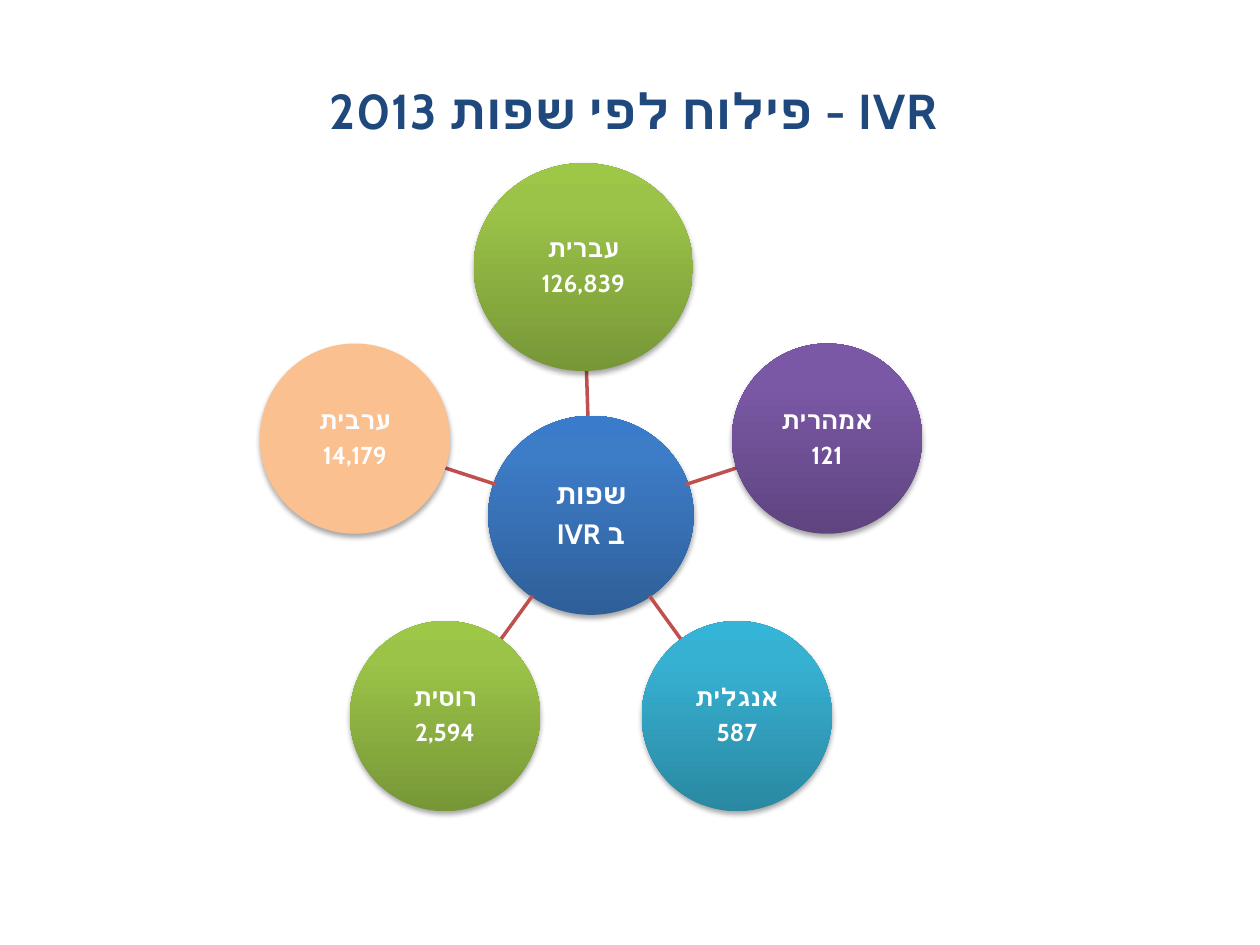
"""Radial diagram of IVR calls by language in 2013."""
from copy import deepcopy
from math import cos, hypot, radians, sin

from lxml import etree
from pptx import Presentation
from pptx import util as u
from pptx.dml.color import RGBColor
from pptx.enum import shapes, text
from pptx.oxml.ns import qn

TITLE = "IVR - פילוח לפי שפות 2013"
HUB = ("שפות", "ב IVR")
LANGUAGES = [
    {"lines": ("עברית", "126,839"), "fill": "green", "size": (17.4, 16.5), "shift": -0.6},
    {"lines": ("אמהרית", "121"), "fill": "purple"},
    {"lines": ("אנגלית", "587"), "fill": "teal"},
    {"lines": ("רוסית", "2,594"), "fill": "green"},
    {"lines": ("ערבית", "14,179"), "fill": "peach"},
]
THEME = {
    "font": "Cabin", "title": "1F497D", "text": "FFFFFF", "line": "C0504D",
    "title_size": 28, "hub_size": 16, "language_size": 14, "line_width": 2,
    "blue": ("2F5F99", "3D7CC7", "3A7CCB"),
    "green": ("779737", "9BC348", "9DC746"),
    "purple": ("5F4480", "7B58A6", "7C57A8"),
    "teal": ("2A88A2", "37B1D2", "34B4D6"),
    "peach": ("FAC090",),
}
STOPS = (0, 0.8, 1)
COLUMNS, ROWS = 100, 75
CENTER, HUB_SIZE = (46.9, 40.9), (16.3, 15.8)
LANGUAGE_SIZE, ORBIT = (15.1, 15.1), 19.7

deck = Presentation()
deck.slide_width, deck.slide_height = u.Inches(10), u.Inches(7.5)
page = deck.slides.add_slide(deck.slide_layouts[6])


def grid(*values):
    return [int(value * deck.slide_width / COLUMNS) for value in values]


def write(frame, lines, size, color, spacing, after=0, tracking=None):
    frame.word_wrap = True
    frame.vertical_anchor = text.MSO_ANCHOR.MIDDLE
    for index, line in enumerate(lines):
        para = frame.paragraphs[0] if index == 0 else frame.add_paragraph()
        para.alignment = text.PP_ALIGN.CENTER
        para.line_spacing, para.space_after = spacing, u.Pt(after)
        para._p.get_or_add_pPr().set("rtl", "1")
        span = para.add_run()
        span.text = line
        span.font.name, span.font.size, span.font.bold = THEME["font"], u.Pt(size), True
        span.font.color.rgb = RGBColor.from_string(color)
        properties = span.font._element
        etree.SubElement(properties, qn("a:cs"), typeface=THEME["font"])
        if tracking:
            properties.set("spc", str(tracking))


def paint(circle, colors):
    if len(colors) == 1:
        circle.fill.solid()
        circle.fill.fore_color.rgb = RGBColor.from_string(colors[0])
        return
    circle.fill.gradient()
    circle.fill.gradient_angle = 90
    stops = circle._element.spPr.find(".//" + qn("a:gsLst"))
    stops.append(deepcopy(stops[-1]))
    for stop, position, color in zip(circle.fill.gradient_stops, STOPS, colors):
        stop.position = position
        stop.color.rgb = RGBColor.from_string(color)


def cast_shadow(circle):
    circle.shadow.inherit = False
    effects = circle._element.spPr.find(qn("a:effectLst"))
    shadow = etree.SubElement(effects, qn("a:outerShdw"), blurRad=str(u.Pt(3.1)),
                              dist=str(u.Pt(1.8)), dir="5400000", rotWithShape="0")
    color = etree.SubElement(shadow, qn("a:srgbClr"), val="000000")
    etree.SubElement(color, qn("a:alpha"), val="35000")


def add_circle(center, size, lines, fill, points):
    (x, y), (width, height) = center, size
    circle = page.shapes.add_shape(
        shapes.MSO_SHAPE.OVAL, *grid(x - width / 2, y - height / 2, width, height))
    paint(circle, THEME[fill])
    circle.line.fill.background()
    cast_shadow(circle)
    frame = circle.text_frame
    frame.margin_left = frame.margin_right = frame.margin_top = frame.margin_bottom = u.Inches(0.01)
    write(frame, lines, points, THEME["text"], 0.9, points * 0.35)


def add_spoke(center, size):
    dx, dy = center[0] - CENTER[0], center[1] - CENTER[1]
    reach = hypot(dx, dy)
    ends = [CENTER[axis] + delta / reach * distance
            for distance in (HUB_SIZE[1] / 2, reach - size[1] / 2)
            for axis, delta in enumerate((dx, dy))]
    spoke = page.shapes.add_connector(shapes.MSO_CONNECTOR.STRAIGHT, *grid(*ends))
    spoke.line.color.rgb = RGBColor.from_string(THEME["line"])
    spoke.line.width = u.Pt(THEME["line_width"])
    etree.SubElement(spoke._element.spPr, qn("a:effectLst"))


title = page.shapes.add_textbox(*grid(3.3, 5.2, 94, 4.7))
write(title.text_frame, [TITLE], THEME["title_size"], THEME["title"], 1.5, tracking=50)

add_circle(CENTER, HUB_SIZE, HUB, "blue", THEME["hub_size"])
for index, language in enumerate(LANGUAGES):
    angle = radians(360 / len(LANGUAGES) * index - 90)
    spot = (CENTER[0] + ORBIT * cos(angle) + language.get("shift", 0),
            CENTER[1] + ORBIT * sin(angle))
    size = language.get("size", LANGUAGE_SIZE)
    add_spoke(spot, size)
    add_circle(spot, size, language["lines"], language["fill"], THEME["language_size"])

deck.save("out.pptx")
